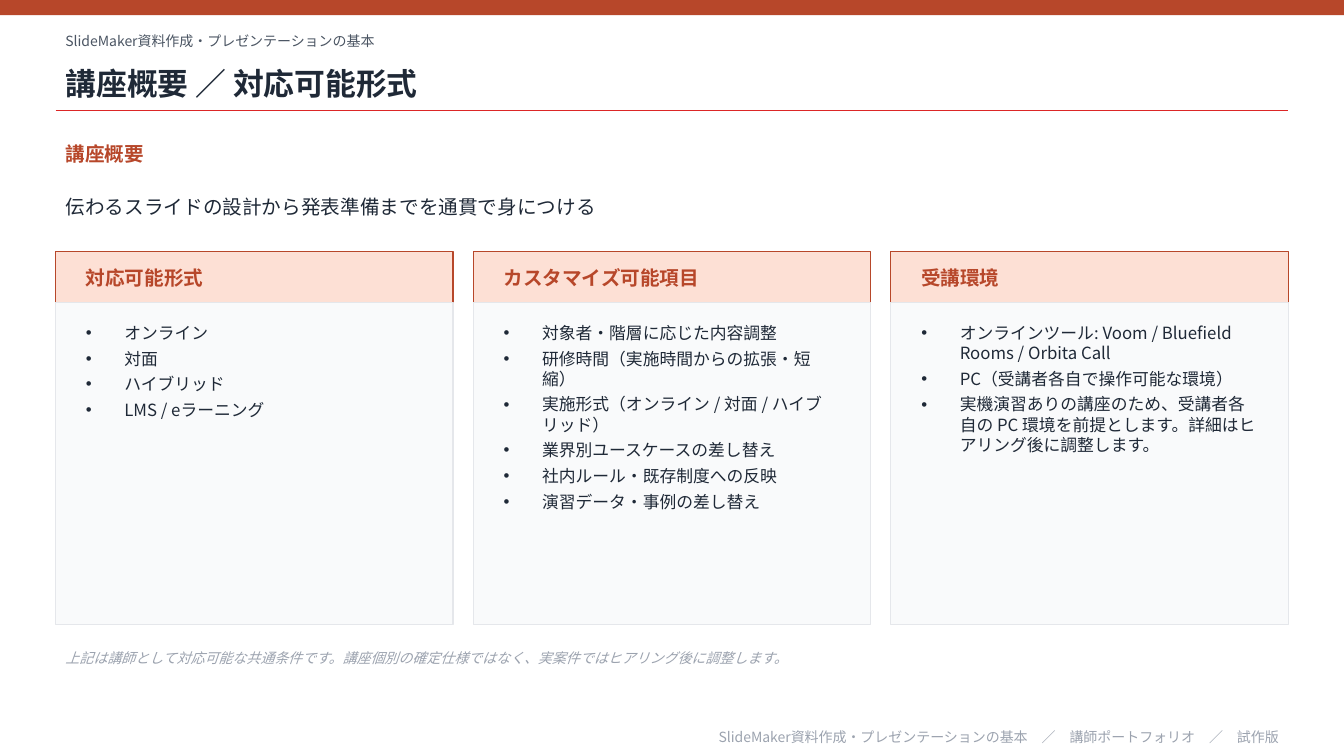
from dataclasses import dataclass

from lxml.etree import SubElement
from pptx import Presentation
from pptx.dml.color import RGBColor
from pptx.enum.shapes import MSO_CONNECTOR, MSO_SHAPE
from pptx.enum.text import MSO_ANCHOR, MSO_AUTO_SIZE, PP_ALIGN
from pptx.oxml.ns import qn
from pptx.util import Cm, Pt


@dataclass(frozen=True)
class Theme:
    font: str = "Noto Sans CJK JP"
    accent: str = "B7472A"
    accent_light: str = "FDE0D5"
    rule: str = "DC2626"
    ink: str = "1F2937"
    ink_soft: str = "4B5563"
    muted: str = "9CA3AF"
    panel: str = "F9FAFB"
    panel_border: str = "E5E7EB"
    title_size: int = 22
    heading_size: int = 14
    list_size: int = 12
    small_size: int = 10


theme = Theme()

COURSE = "SlideMaker資料作成・プレゼンテーションの基本"
COLUMNS = [
    ("対応可能形式", ["オンライン", "対面", "ハイブリッド", "LMS / eラーニング"]),
    ("カスタマイズ可能項目", [
        "対象者・階層に応じた内容調整",
        "研修時間（実施時間からの拡張・短縮）",
        "実施形式（オンライン / 対面 / ハイブリッド）",
        "業界別ユースケースの差し替え",
        "社内ルール・既存制度への反映",
        "演習データ・事例の差し替え",
    ]),
    ("受講環境", [
        "オンラインツール: Voom / Bluefield Rooms / Orbita Call",
        "PC（受講者各自で操作可能な環境）",
        "実機演習ありの講座のため、受講者各自の PC 環境を前提とします。詳細はヒアリング後に調整します。",
    ]),
]

SLIDE_WIDTH = Cm(33.87)
MARGIN = Cm(1.4)
CONTENT_WIDTH = Cm(31.07)
GAP = Cm(0.51)
COLUMN_WIDTH = (CONTENT_WIDTH - 2 * GAP) // 3
HEADER_TOP, HEADER_HEIGHT = Cm(6.35), Cm(1.27)
PANEL_TOP, PANEL_HEIGHT = Cm(7.62), Cm(8.13)
BULLET_INDENT = Cm(0.97)


def write(shape, box, lines, size, color, bold=False, italic=False,
          align=PP_ALIGN.LEFT, bulleted=False):
    """Place a text shape in front at box and fill it, one paragraph per line."""
    shape.left, shape.top, shape.width, shape.height = box
    slide.shapes.element.append(shape.element)
    frame = shape.text_frame
    frame.word_wrap = True
    frame.auto_size = MSO_AUTO_SIZE.NONE
    frame.vertical_anchor = MSO_ANCHOR.TOP if bulleted else MSO_ANCHOR.MIDDLE
    for index, line in enumerate(lines):
        paragraph = frame.add_paragraph() if index else frame.paragraphs[0]
        paragraph.alignment = align
        paragraph.space_before = Pt(0)
        paragraph.space_after = Pt(4 if bulleted else 0)
        properties = paragraph._p.get_or_add_pPr()
        indent = BULLET_INDENT if bulleted else 0
        properties.set("marL", str(indent))
        properties.set("indent", str(-indent))
        if bulleted:
            SubElement(properties, qn("a:buChar")).set("char", "•")
        else:
            SubElement(properties, qn("a:buNone"))
        run = paragraph.add_run()
        run.text = line
        run.font.size = Pt(size)
        run.font.bold = bold
        run.font.italic = italic
        run.font.color.rgb = RGBColor.from_string(color)
        run.font.name = theme.font
        east_asian = SubElement(run._r.get_or_add_rPr(), qn("a:ea"))
        east_asian.set("typeface", theme.font)


def add_rectangle(box, fill, border=None):
    rectangle = slide.shapes.add_shape(MSO_SHAPE.RECTANGLE, *box)
    rectangle.shadow.inherit = False
    rectangle.fill.solid()
    rectangle.fill.fore_color.rgb = RGBColor.from_string(fill)
    if border:
        rectangle.line.color.rgb = RGBColor.from_string(border)
        rectangle.line.width = Pt(0.75)
    else:
        rectangle.line.fill.background()


presentation = Presentation()
presentation.slide_width = SLIDE_WIDTH
presentation.slide_height = Cm(19.05)
comparison_layout = presentation.slide_layouts.get_by_name("Comparison")
slide = presentation.slides.add_slide(comparison_layout)
summary, *column_lists = [slide.placeholders[index] for index in (1, 2, 3, 4)]

# Top band, title and rule
add_rectangle((0, 0, SLIDE_WIDTH, Cm(0.38)), theme.accent)
write(slide.shapes.add_textbox(0, 0, 0, 0),
      (MARGIN, Cm(0.64), CONTENT_WIDTH, Cm(0.76)),
      [COURSE], theme.small_size, theme.ink_soft)
write(slide.shapes.title, (MARGIN, Cm(1.4), CONTENT_WIDTH, Cm(1.4)),
      ["講座概要 ／ 対応可能形式"], theme.title_size, theme.ink, bold=True)
title_rule = slide.shapes.add_connector(
    MSO_CONNECTOR.STRAIGHT, MARGIN, Cm(2.79), MARGIN + CONTENT_WIDTH, Cm(2.79))
title_rule.line.color.rgb = RGBColor.from_string(theme.rule)
title_rule.line.width = Pt(1)
SubElement(title_rule.element.spPr, qn("a:effectLst"))

# Course overview
write(slide.shapes.add_textbox(0, 0, 0, 0),
      (MARGIN, Cm(3.43), CONTENT_WIDTH, Cm(0.89)),
      ["講座概要"], theme.heading_size, theme.accent, bold=True)
write(summary, (MARGIN, Cm(4.45), CONTENT_WIDTH, Cm(1.52)),
      ["伝わるスライドの設計から発表準備までを通貫で身につける"],
      theme.heading_size, theme.ink)

# Three columns of conditions
for number, (heading, items) in enumerate(COLUMNS):
    left = MARGIN + number * (COLUMN_WIDTH + GAP)
    text_left, text_width = left + GAP, COLUMN_WIDTH - 2 * GAP
    add_rectangle((left, HEADER_TOP, COLUMN_WIDTH, HEADER_HEIGHT),
                  theme.accent_light, theme.accent)
    write(slide.shapes.add_textbox(0, 0, 0, 0),
          (text_left, HEADER_TOP, text_width, HEADER_HEIGHT),
          [heading], theme.heading_size, theme.accent, bold=True)
    add_rectangle((left, PANEL_TOP, COLUMN_WIDTH, PANEL_HEIGHT),
                  theme.panel, theme.panel_border)
    write(column_lists[number], (text_left, Cm(8), text_width, Cm(7.24)),
          items, theme.list_size, theme.ink, bulleted=True)

# Note and footer
write(slide.shapes.add_textbox(0, 0, 0, 0),
      (MARGIN, Cm(16.13), CONTENT_WIDTH, Cm(0.89)),
      ["上記は講師として対応可能な共通条件です。講座個別の確定仕様ではなく、実案件ではヒアリング後に調整します。"],
      theme.small_size, theme.muted, italic=True)
write(slide.shapes.add_textbox(0, 0, 0, 0),
      (MARGIN, Cm(18.29), CONTENT_WIDTH, Cm(0.56)),
      [f"{COURSE}　／　講師ポートフォリオ　／　試作版"],
      theme.small_size, theme.muted, align=PP_ALIGN.RIGHT)

presentation.save("out.pptx")
